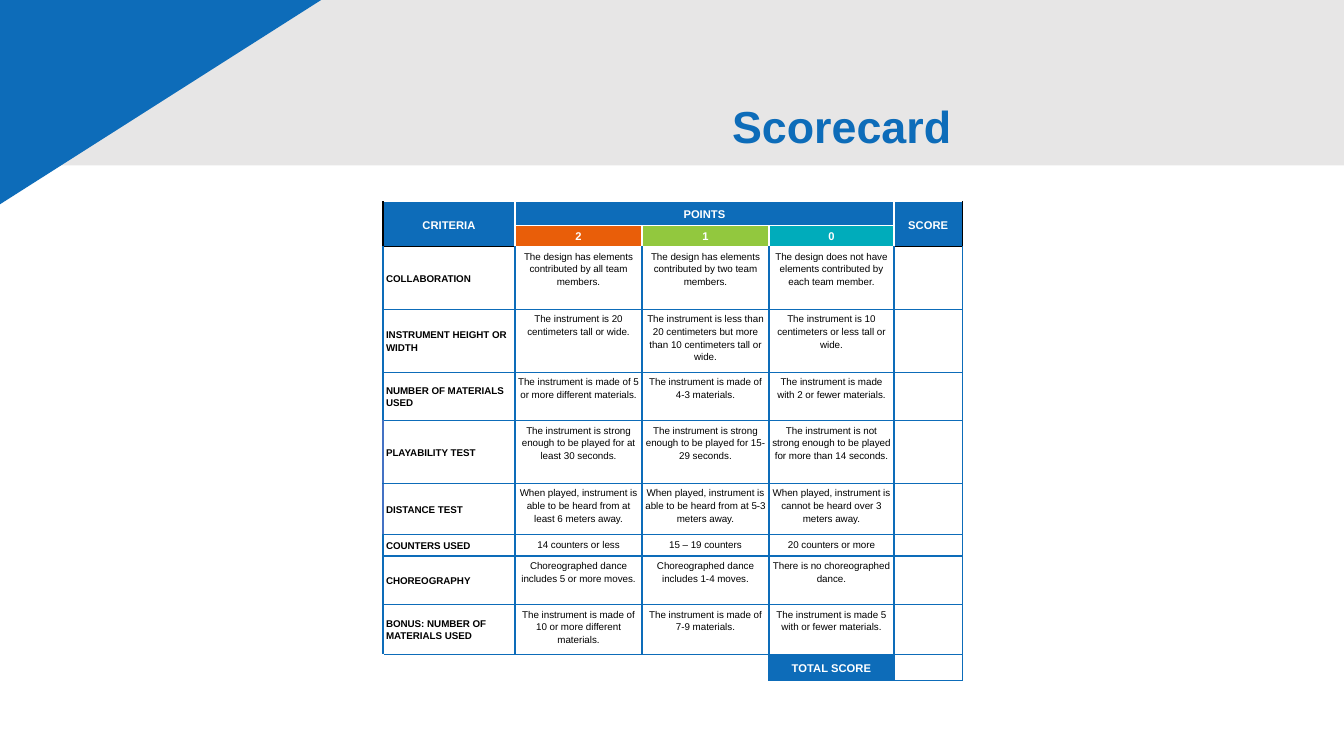
from lxml import etree
from pptx import Presentation
from pptx.dml.color import RGBColor
from pptx.enum.shapes import MSO_SHAPE
from pptx.enum.text import MSO_ANCHOR, PP_ALIGN
from pptx.oxml.ns import qn
from pptx.util import Pt

RECTANGLE, TRIANGLE = MSO_SHAPE.RECTANGLE, MSO_SHAPE.RIGHT_TRIANGLE
TOP, MIDDLE = MSO_ANCHOR.TOP, MSO_ANCHOR.MIDDLE
LEFT, CENTER, RIGHT = PP_ALIGN.LEFT, PP_ALIGN.CENTER, PP_ALIGN.RIGHT

# Content
TITLE = "Scorecard"
POINT_LEVELS = ["2", "1", "0"]
CRITERIA = [
    ("COLLABORATION",
     "The design has elements contributed by all team members.",
     "The design has elements contributed by two team members.",
     "The design does not have elements contributed by each team member."),
    ("INSTRUMENT HEIGHT OR WIDTH",
     "The instrument is 20 centimeters tall or wide.",
     "The instrument is less than 20 centimeters but more than 10 centimeters tall or wide.",
     "The instrument is 10 centimeters or less tall or wide."),
    ("NUMBER OF MATERIALS USED",
     "The instrument is made of 5 or more different materials.",
     "The instrument is made of 4-3 materials.",
     "The instrument is made with 2 or fewer materials."),
    ("PLAYABILITY TEST",
     "The instrument is strong enough to be played for at least 30 seconds.",
     "The instrument is strong enough to be played for 15-29 seconds.",
     "The instrument is not strong enough to be played for more than 14 seconds."),
    ("DISTANCE TEST",
     "When played, instrument is able to be heard from at least 6 meters away.",
     "When played, instrument is able to be heard from at 5-3 meters away.",
     "When played, instrument is cannot be heard over 3 meters away."),
    ("COUNTERS USED", "14 counters or less", "15 – 19 counters", "20 counters or more"),
    ("CHOREOGRAPHY",
     "Choreographed dance includes 5 or more moves.",
     "Choreographed dance includes 1-4 moves.",
     "There is no choreographed dance."),
    ("BONUS: NUMBER OF MATERIALS USED",
     "The instrument is made of 10 or more different materials.",
     "The instrument is made of 7-9 materials.",
     "The instrument is made 5 with or fewer materials."),
]
GRID = [
    ("CRITERIA", "POINTS", "", "", "SCORE"),
    ("", *POINT_LEVELS, ""),
    *[(*criterion, "") for criterion in CRITERIA],
    ("", "", "", "TOTAL SCORE", ""),
]

# Theme
THEME = {
    "font": "Arial", "title": 32, "header": 8, "body": 7,
    "blue": "0D6CB9", "edge": "4472C4", "band": "E7E6E6",
    "white": "FFFFFF", "black": "000000",
    "levels": ["E95E09", "92C83E", "00ACBB"],
}
BLUE, WHITE, BLACK = THEME["blue"], THEME["white"], THEME["black"]

# Layout, in points
COLUMN_WIDTHS = [94.3, 90.7, 90.7, 89.3, 49]
ROW_HEIGHTS = [17.2, 15.1, 44.8, 44.8, 34.7, 44.8, 36.6, 15.2, 34.7, 35.5, 18.7]
TABLE_LEFT, TABLE_TOP = 273.6, 144
CELL_MARGIN, BORDER = 2.16, 1
HEADER_ROWS = 2
TOTAL_ROW, SCORE_COL = len(GRID) - 1, len(COLUMN_WIDTHS) - 1
TOTAL_COL = SCORE_COL - 1
EDGE_ROWS = (5, 6)


def add_run(paragraph, text, size, color, bold):
    run = paragraph.add_run()
    run.text = text
    run.font.name = THEME["font"]
    run.font.size = Pt(size)
    run.font.bold = bold
    run.font.color.rgb = RGBColor.from_string(color)


def add_backdrop(kind, box, color):
    backdrop = slide.shapes.add_shape(kind, *map(Pt, box))
    backdrop.fill.solid()
    backdrop.fill.fore_color.rgb = RGBColor.from_string(color)
    backdrop.line.fill.background()
    backdrop.shadow.inherit = False
    title.element.addprevious(backdrop.element)
    return backdrop


def border_colors(row, col):
    """Colours of the left, right, top and bottom borders."""
    outer = col in (0, SCORE_COL)
    if row < HEADER_ROWS:
        return {"L": BLACK if col == 0 else WHITE,
                "R": BLACK if col == SCORE_COL else WHITE,
                "T": WHITE,
                "B": BLACK if outer else WHITE}
    colors = dict.fromkeys("LRTB", BLUE)
    if row == HEADER_ROWS:
        colors["T"] = BLACK if outer else WHITE
    if row in EDGE_ROWS and col == 0:
        colors["L"] = THEME["edge"]
    if row == TOTAL_ROW and col < TOTAL_COL:
        colors["L"] = colors["B"] = WHITE
    return colors


def set_borders(cell, colors):
    properties = cell._tc.get_or_add_tcPr()
    for side, color in colors.items():
        line = etree.SubElement(properties, qn(f"a:ln{side}"), w=str(Pt(BORDER)))
        fill = etree.SubElement(line, qn("a:solidFill"))
        etree.SubElement(fill, qn("a:srgbClr"), val=color)


def cell_fill(row, col):
    if row == 1 and 0 < col < SCORE_COL:
        return THEME["levels"][col - 1]
    if row < HEADER_ROWS or (row, col) == (TOTAL_ROW, TOTAL_COL):
        return BLUE
    return WHITE


def fill_cell(cell, row, col, text):
    set_borders(cell, border_colors(row, col))
    background = cell_fill(row, col)
    cell.fill.solid()
    cell.fill.fore_color.rgb = RGBColor.from_string(background)
    cell.margin_left = cell.margin_right = Pt(CELL_MARGIN)
    cell.margin_top = cell.margin_bottom = Pt(CELL_MARGIN)

    is_header = background != WHITE
    is_criterion = col == 0 and not is_header
    top_text = row == 1 or (not is_header and not is_criterion)
    cell.vertical_anchor = TOP if top_text else MIDDLE
    paragraph = cell.text_frame.paragraphs[0]
    paragraph.alignment = LEFT if is_criterion else CENTER
    paragraph.line_spacing = 1.15
    size = THEME["header" if is_header else "body"]
    if text:
        add_run(paragraph, text, size, WHITE if is_header else BLACK,
                is_header or is_criterion)
    else:
        # Small type keeps empty rows from growing
        etree.SubElement(paragraph._p, qn("a:endParaRPr"), sz=str(size * 100))


presentation = Presentation()
presentation.slide_width, presentation.slide_height = Pt(960), Pt(540)
slide = presentation.slides.add_slide(presentation.slide_layouts[5])
title = slide.shapes.title

# Grey band and blue corner behind the title
add_backdrop(RECTANGLE, (-18.7, -13.7, 978.7, 131.8), THEME["band"])
corner = add_backdrop(TRIANGLE, (-185, -123.8, 609.1, 387.4), BLUE)
corner.rotation = 180
corner.element.spPr.xfrm.set("flipH", "1")

# Title
title.left, title.top, title.width, title.height = map(Pt, (-11.5, 39.6, 698.4, 104.4))
title.text_frame.vertical_anchor = MIDDLE
heading = title.text_frame.paragraphs[0]
heading.alignment = RIGHT
heading.line_spacing = 0.9
add_run(heading, TITLE, THEME["title"], BLUE, True)

# Scorecard table
scorecard = slide.shapes.add_table(
    len(GRID), len(COLUMN_WIDTHS), Pt(TABLE_LEFT), Pt(TABLE_TOP),
    Pt(sum(COLUMN_WIDTHS)), Pt(sum(ROW_HEIGHTS))).table
scorecard.first_row = scorecard.horz_banding = False
for column, width in zip(scorecard.columns, COLUMN_WIDTHS):
    column.width = Pt(width)
for table_row, height in zip(scorecard.rows, ROW_HEIGHTS):
    table_row.height = Pt(height)
for row, texts in enumerate(GRID):
    for col, text in enumerate(texts):
        fill_cell(scorecard.cell(row, col), row, col, text)

# Merged cells: criteria, points, score and the blank beside the total
for first, last in [((0, 0), (1, 0)), ((0, 1), (0, TOTAL_COL)),
                    ((0, SCORE_COL), (1, SCORE_COL)),
                    ((TOTAL_ROW, 0), (TOTAL_ROW, TOTAL_COL - 1))]:
    scorecard.cell(*first).merge(scorecard.cell(*last))

presentation.save("out.pptx")
